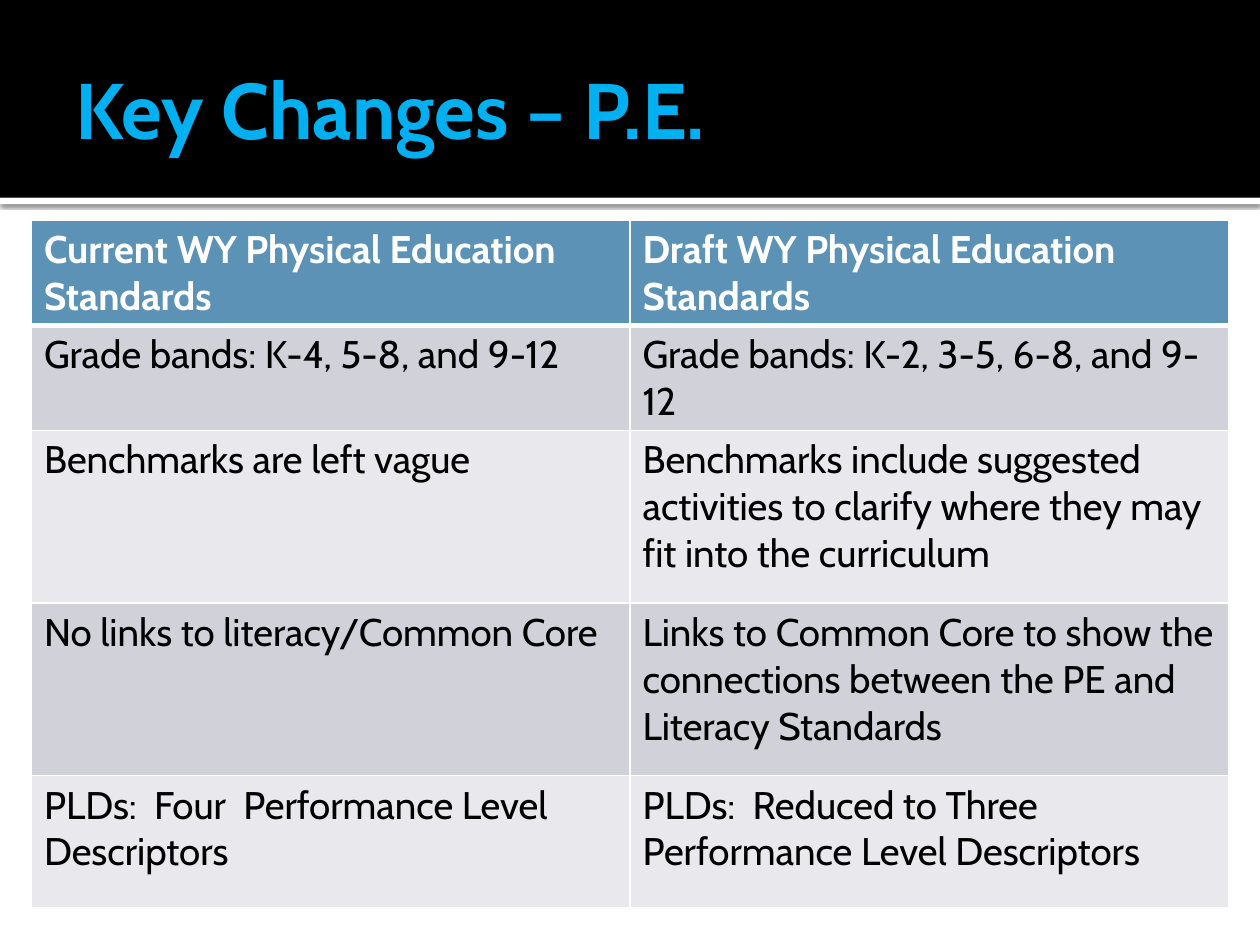
"""Build the slide that compares current and draft physical education standards."""
from lxml.etree import SubElement
from pptx import Presentation
from pptx.dml.color import RGBColor
from pptx.enum.shapes import MSO_SHAPE as Shape
from pptx.enum.text import MSO_ANCHOR as Anchor
from pptx.oxml import parse_xml
from pptx.oxml.ns import nsdecls, qn
from pptx.util import Inches, Pt

COLORS = {
    "black": "000000",
    "white": "FFFFFF",
    "title": "00B0F0",
    "header": "5C92B5",
    "odd": "D1D1DA",
    "even": "E9E9ED",
}
FONT = "Cabin"
ROWS = [
    (0.83, "Current WY Physical Education Standards",
     "Draft WY Physical Education Standards"),
    (0.83, "Grade bands: K-4, 5-8, and 9-12",
     "Grade bands: K-2, 3-5, 6-8, and 9-12"),
    (1.37, "Benchmarks are left vague",
     "Benchmarks include suggested activities to clarify where they may fit into the curriculum"),
    (1.37, "No links to literacy/Common Core",
     "Links to Common Core to show the connections between the PE and Literacy Standards"),
    (1.05, "PLDs:  Four  Performance Level Descriptors",
     "PLDs:  Reduced to Three Performance Level Descriptors"),
]


def add_span(para, text, size, color, bold):
    span = para.add_run()
    span.text = text
    span.font.name = FONT
    span.font.size = Pt(size)
    span.font.bold = bold
    span.font.color.rgb = RGBColor.from_string(COLORS[color])


def add_border(cell, side, width):
    cell._tc.get_or_add_tcPr().append(parse_xml(
        f'<a:ln{side} {nsdecls("a")} w="{Pt(width)}"><a:solidFill>'
        f'<a:srgbClr val="{COLORS["white"]}"/></a:solidFill></a:ln{side}>'))


deck = Presentation()
deck.slide_width, deck.slide_height = Inches(10), Inches(7.5)
page = deck.slides.add_slide(deck.slide_layouts[6])
margin = deck.slide_width // 40
band_height = Inches(1.57)

bars = []
for top, height, color in [(band_height, Inches(0.05), "white"), (0, band_height, "black")]:
    bar = page.shapes.add_shape(Shape.RECTANGLE, 0, top, deck.slide_width, height)
    bar.fill.solid()
    bar.fill.fore_color.rgb = RGBColor.from_string(COLORS[color])
    bar.line.fill.background()
    bar.shadow.inherit = False
    bars.append(bar)

effects = bars[0]._element.spPr.find(qn("a:effectLst"))
shadow = SubElement(effects, qn("a:outerShdw"), blurRad=str(Pt(2.5)), dist=str(Pt(0.8)),
                    dir="5400000", algn="tl", rotWithShape="0")
shade = SubElement(shadow, qn("a:srgbClr"), val=COLORS["black"])
SubElement(shade, qn("a:alpha"), val="60000")

title = page.shapes.add_textbox(2 * margin, Inches(0.17),
                                deck.slide_width - 4 * margin, Inches(1.37))
frame = title.text_frame
frame.word_wrap = True
frame.vertical_anchor = Anchor.MIDDLE
frame.margin_left = Inches(0.1)
frame.margin_right = frame.margin_top = frame.margin_bottom = Inches(0.05)
add_span(frame.paragraphs[0], "Key Changes – P.E.", 45, "title", True)

table = page.shapes.add_table(len(ROWS), 2, margin, Inches(1.75),
                              deck.slide_width - 2 * margin, Inches(5.45)).table
for row, (height, *texts) in enumerate(ROWS):
    table.rows[row].height = Inches(height)
    is_header = row == 0
    fill = "header" if is_header else "odd" if row % 2 else "even"
    for column, text in enumerate(texts):
        cell = table.cell(row, column)
        for side in "LRTB":
            heavy = (row, side) in [(0, "B"), (1, "T")]
            add_border(cell, side, 3 if heavy else 1)
        cell.fill.solid()
        cell.fill.fore_color.rgb = RGBColor.from_string(COLORS[fill])
        add_span(cell.text_frame.paragraphs[0], text, 22,
                 "white" if is_header else "black", is_header)

deck.save("out.pptx")
